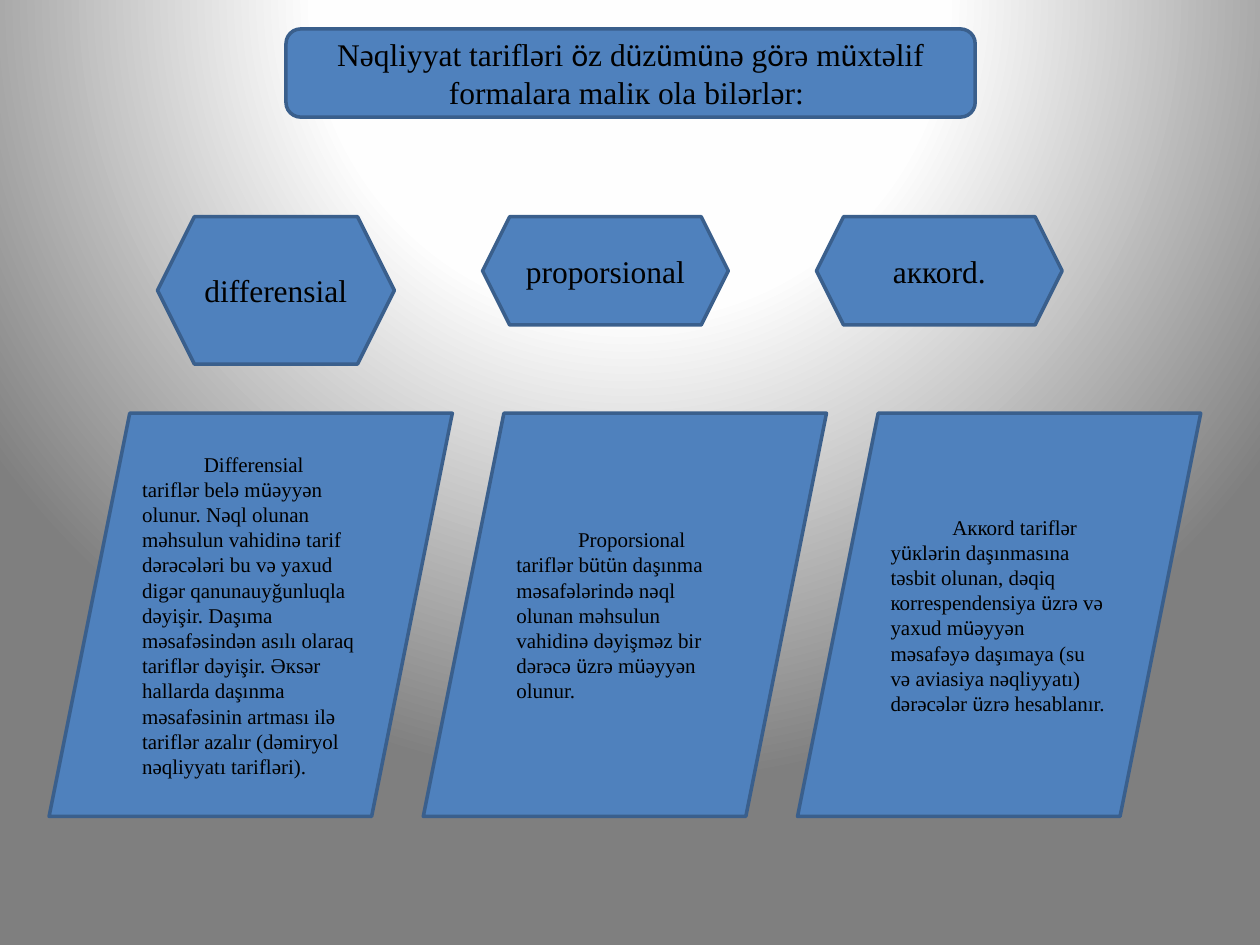
from itertools import groupby

from pptx import Presentation
from pptx.dml.color import RGBColor
from pptx.enum.shapes import MSO_SHAPE
from pptx.enum.text import MSO_ANCHOR, PP_ALIGN
from pptx.oxml import parse_xml
from pptx.oxml.ns import nsdecls
from pptx.util import Inches, Pt

TITLE_BOX = MSO_SHAPE.FLOWCHART_ALTERNATE_PROCESS
HEXAGON = MSO_SHAPE.HEXAGON
PARALLELOGRAM = MSO_SHAPE.FLOWCHART_DATA
LEFT, CENTER = PP_ALIGN.LEFT, PP_ALIGN.CENTER
MIDDLE = MSO_ANCHOR.MIDDLE

COLORS = {"fill": "4F81BD", "line": "3A5F8C", "text": "000000"}
BACKGROUND_STOPS = {0: "FFFFFF", 40: "FEFEFE", 100: "7F7F7F"}
MAIN_FONT, UMLAUT_FONT = "Times New Roman", "Calibri"
UMLAUTS = "öü"

TITLE = "Nəqliyyаt tаrifləri öz düzümünə görə müхtəlif fоrmаlаrа mаliк оlа bilərlər: "

# label, left, width, height
FORMS = [
    ("diffеrеnsiаl", 1.25, 1.88, 1.17),
    ("prоpоrsiоnаl ", 3.83, 1.95, 0.86),
    ("аккоrd.", 6.48, 1.95, 0.86),
]

DESCRIPTIONS = [
    "Diffеrеnsiаl tаriflər bеlə müəyyən оlunur. Nəql оlunаn məhsulun vаhidinə "
    "tаrif dərəcələri bu və yахud digər qаnunаuyğunluqlа dəyişir. Dаşımа "
    "məsаfəsindən аsılı оlаrаq tаriflər dəyişir. Əкsər hаllаrdа dаşınmа "
    "məsаfəsinin аrtmаsı ilə tаriflər аzаlır (dəmiryоl nəqliyyаtı tаrifləri).",
    "Prоpоrsiоnаl tаriflər bütün dаşınmа məsаfələrində nəql оlunаn məhsulun "
    "vаhidinə dəyişməz bir dərəcə üzrə müəyyən оlunur.",
    "Аккоrd tаriflər yüкlərin dаşınmаsınа təsbit оlunаn, dəqiq коrrеspеndеnsiyа "
    "üzrə və yахud müəyyən məsаfəyə dаşımаyа (su və аviаsiyа nəqliyyаtı) "
    "dərəcələr üzrə hеsаblаnır.",
]


def set_background(slide):
    """Radial gradient centred above the slide."""
    stops = "".join(
        f'<a:gs pos="{position * 1000}"><a:srgbClr val="{color}"/></a:gs>'
        for position, color in BACKGROUND_STOPS.items()
    )
    background = parse_xml(
        f'<p:bg {nsdecls("p", "a")}><p:bgPr><a:gradFill rotWithShape="1">'
        f'<a:gsLst>{stops}</a:gsLst><a:path path="circle">'
        '<a:fillToRect l="50000" t="-80000" r="50000" b="180000"/></a:path>'
        "</a:gradFill><a:effectLst/></p:bgPr></p:bg>"
    )
    slide.element.cSld.insert(0, background)


def write_text(paragraph, text, size):
    """Set the umlauts in their own font, as separate runs."""
    for is_umlaut, letters in groupby(text, key=lambda letter: letter in UMLAUTS):
        run = paragraph.add_run()
        run.text = "".join(letters)
        run.font.name = UMLAUT_FONT if is_umlaut else MAIN_FONT
        run.font.size = Pt(size)
        run.font.color.rgb = RGBColor.from_string(COLORS["text"])


def add_box(slide, kind, left, top, width, height, text, size=18, alignment=CENTER):
    shape = slide.shapes.add_shape(
        kind, Inches(left), Inches(top), Inches(width), Inches(height)
    )
    shape.shadow.inherit = False
    shape.fill.solid()
    shape.fill.fore_color.rgb = RGBColor.from_string(COLORS["fill"])
    shape.line.color.rgb = RGBColor.from_string(COLORS["line"])
    shape.line.width = Pt(2)
    text_frame = shape.text_frame
    text_frame.word_wrap = True
    text_frame.vertical_anchor = MIDDLE
    paragraph = text_frame.paragraphs[0]
    paragraph.alignment = alignment
    write_text(paragraph, text, size)
    return shape


def add_description(slide, left, text):
    shape = add_box(slide, PARALLELOGRAM, left, 3.28, 3.2, 3.2, text, 12, LEFT)
    properties = shape.text_frame.paragraphs[0]._p.get_or_add_pPr()
    properties.set("marL", "0")
    properties.set("indent", str(Inches(0.49)))


def main():
    presentation = Presentation()
    presentation.slide_width = Inches(10)
    presentation.slide_height = Inches(7.5)
    slide = presentation.slides.add_slide(presentation.slide_layouts[6])
    set_background(slide)
    add_box(slide, TITLE_BOX, 2.27, 0.23, 5.47, 0.7, TITLE)
    for label, left, width, height in FORMS:
        add_box(slide, HEXAGON, left, 1.72, width, height, label)
    for column, description in enumerate(DESCRIPTIONS):
        add_description(slide, 0.39 + column * 2.97, description)
    presentation.save("out.pptx")


if __name__ == "__main__":
    main()
